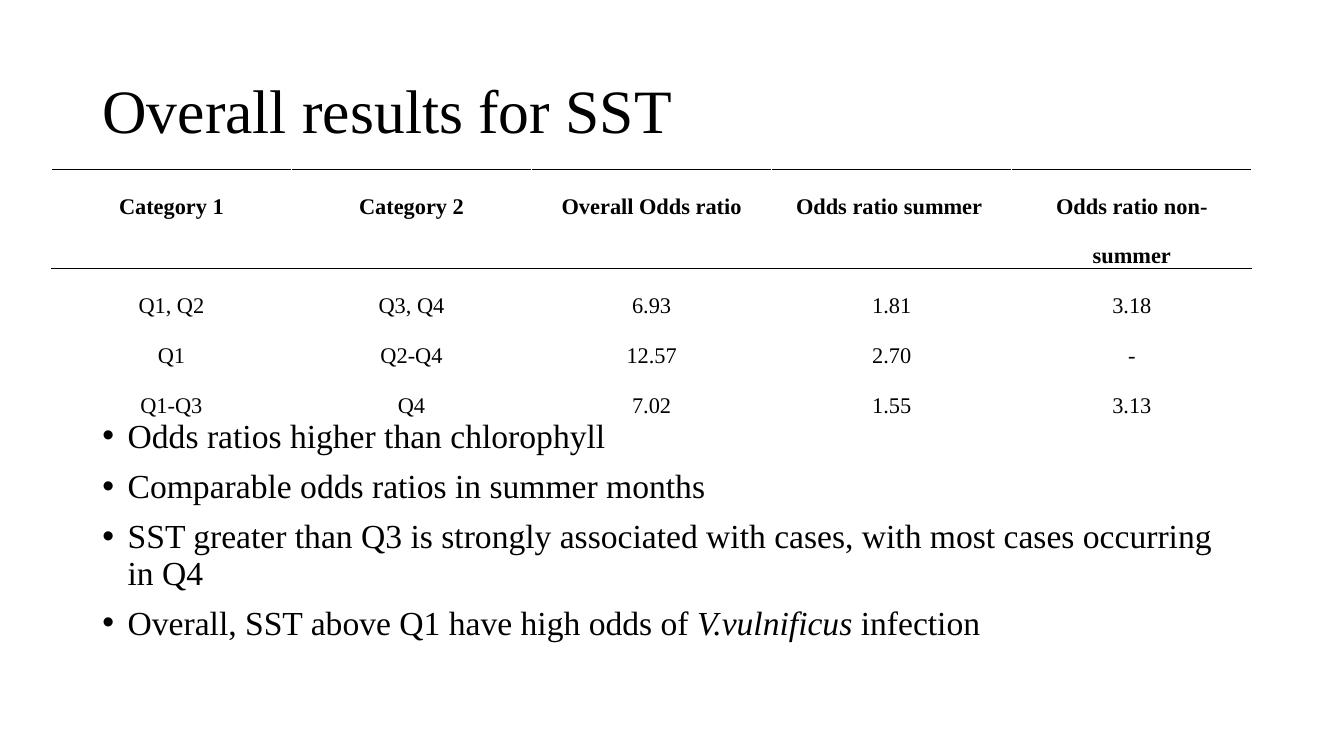
import pptx
import pptx.dml.color
import pptx.enum.text
import pptx.oxml
import pptx.oxml.ns
import pptx.util

Pt = pptx.util.Pt
PP_ALIGN = pptx.enum.text.PP_ALIGN

TITLE = "Overall results for SST"
ODDS = [
    ("Category 1", "Category 2", "Overall Odds ratio", "Odds ratio summer ", "Odds ratio non-summer"),
    ("Q1, Q2", "Q3, Q4", "6.93", "1.81", "3.18"),
    ("Q1", "Q2-Q4", "12.57", "2.70", "-"),
    ("Q1-Q3", "Q4", "7.02", "1.55", "3.13"),
]
# Text between asterisks is italic
FINDINGS = [
    "Odds ratios higher than chlorophyll",
    "Comparable odds ratios in summer months",
    "SST greater than Q3 is strongly associated with cases, with most cases occurring in Q4",
    "Overall, SST above Q1 have high odds of *V.vulnificus *infection",
]

FONT = "Times New Roman"
INK = "000000"
SLIDE_SIZE = (960, 540)
TITLE_BOX = (66, 28.75, 828, 104.4)
FINDINGS_BOX = (66, 295.8, 828, 190.8)
TABLE_LEFT, TABLE_TOP, COLUMN_WIDTH = 36.7, 120.8, 171.5
HEADER_HEIGHT, ROW_HEIGHT = 71.2, 35.4
BULLET_INDENT = 18


def rgb(color):
    return pptx.dml.color.RGBColor.from_string(color)


def style(run, size, bold=False, italic=False):
    run.font.name = FONT
    run.font.size = Pt(size)
    run.font.bold = bold
    run.font.italic = italic
    run.font.color.rgb = rgb(INK)


def place(shape, box):
    shape.left, shape.top, shape.width, shape.height = (Pt(length) for length in box)


def add_rules(cell, edges):
    """Draw 1 pt lines on the given cell edges, listed in top, bottom order."""
    properties = cell._tc.get_or_add_tcPr()
    for position, edge in enumerate(edges):
        properties.insert(position, pptx.oxml.parse_xml(
            f'<a:ln{edge} {pptx.oxml.ns.nsdecls("a")} w="12700"><a:solidFill>'
            f'<a:srgbClr val="{INK}"/></a:solidFill></a:ln{edge}>'))


def add_title(slide):
    title = slide.shapes.title
    place(title, TITLE_BOX)
    title.text_frame.text = TITLE
    title.text_frame.auto_size = pptx.enum.text.MSO_AUTO_SIZE.NONE
    title.text_frame.vertical_anchor = pptx.enum.text.MSO_ANCHOR.MIDDLE
    heading = title.text_frame.paragraphs[0]
    heading.alignment = PP_ALIGN.LEFT
    heading.line_spacing = 0.9
    style(heading.runs[0], 44)


def add_findings(slide):
    body = slide.placeholders[1]
    place(body, FINDINGS_BOX)
    body.text_frame.auto_size = pptx.enum.text.MSO_AUTO_SIZE.NONE
    body.text_frame.text = "\n".join(finding.replace("*", "") for finding in FINDINGS)
    for paragraph, finding in zip(body.text_frame.paragraphs, FINDINGS):
        paragraph.line_spacing = 0.9
        paragraph.space_before = Pt(10)
        paragraph.space_after = Pt(0)
        properties = paragraph._p.get_or_add_pPr()
        properties.set("marL", str(Pt(BULLET_INDENT)))
        properties.set("indent", str(-Pt(BULLET_INDENT)))
        paragraph.clear()
        for index, part in enumerate(finding.split("*")):
            run = paragraph.add_run()
            run.text = part
            style(run, 24, italic=index % 2 == 1)


def add_odds_table(slide):
    columns = len(ODDS[0])
    heights = [HEADER_HEIGHT] + [ROW_HEIGHT] * (len(ODDS) - 1)
    odds = slide.shapes.add_table(
        len(ODDS), columns, Pt(TABLE_LEFT), Pt(TABLE_TOP),
        Pt(COLUMN_WIDTH * columns), Pt(sum(heights))).table
    odds.first_row = odds.horz_banding = False
    for column in odds.columns:
        column.width = Pt(COLUMN_WIDTH)
    for index, (values, height) in enumerate(zip(ODDS, heights)):
        odds.rows[index].height = Pt(height)
        for cell, value in zip(odds.rows[index].cells, values):
            cell.fill.background()
            cell.margin_left = cell.margin_right = Pt(5)
            cell.margin_top = cell.margin_bottom = 0
            cell.text_frame.text = value
            paragraph = cell.text_frame.paragraphs[0]
            paragraph.alignment = PP_ALIGN.CENTER
            paragraph.line_spacing = 2.0
            style(paragraph.runs[0], 16, bold=index == 0)
            add_rules(cell, {0: "TB", 1: "T"}.get(index, ""))


def main():
    deck = pptx.Presentation()
    deck.slide_width, deck.slide_height = (Pt(length) for length in SLIDE_SIZE)
    slide = deck.slides.add_slide(deck.slide_layouts[1])
    add_title(slide)
    add_findings(slide)
    add_odds_table(slide)
    deck.save("out.pptx")


if __name__ == "__main__":
    main()
